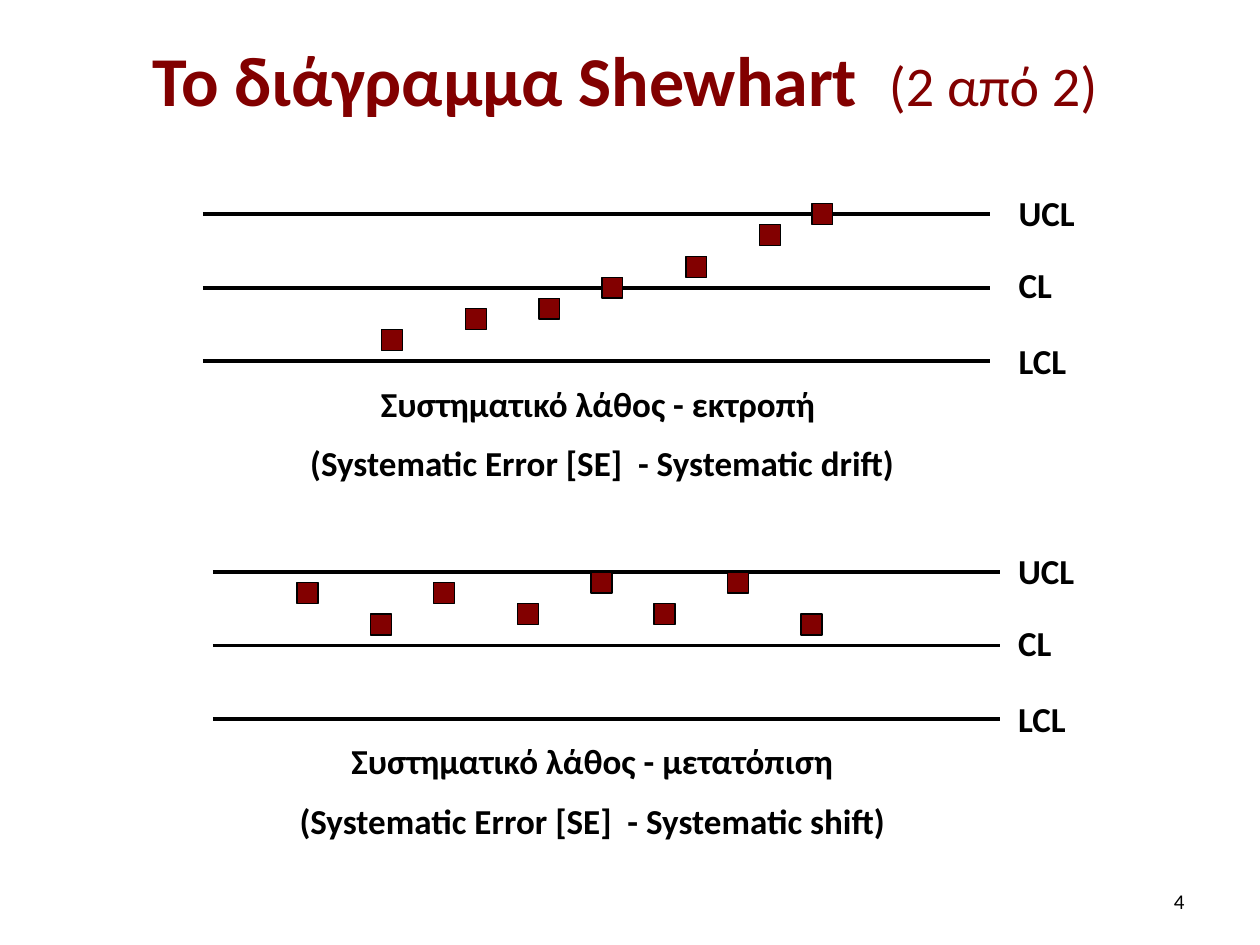
from dataclasses import dataclass

from lxml import etree
from pptx import Presentation
from pptx.dml.color import RGBColor
from pptx.enum.shapes import MSO_CONNECTOR, MSO_SHAPE
from pptx.enum.text import MSO_ANCHOR, PP_ALIGN
from pptx.oxml.ns import qn
from pptx.util import Inches, Pt

STRAIGHT = MSO_CONNECTOR.STRAIGHT
SQUARE = MSO_SHAPE.RECTANGLE
TOP, MIDDLE = MSO_ANCHOR.TOP, MSO_ANCHOR.MIDDLE
LEFT, CENTER, RIGHT = PP_ALIGN.LEFT, PP_ALIGN.CENTER, PP_ALIGN.RIGHT


@dataclass(frozen=True)
class Theme:
    font: str = "Calibri"
    ink: RGBColor = RGBColor(0, 0, 0)
    accent: RGBColor = RGBColor(0x82, 0, 0)
    title: int = 40
    counter: int = 32
    body: int = 20
    page: int = 12
    limit_line: float = 2.25
    marker_line: float = 0.75


THEME = Theme()
SLIDE_W, SLIDE_H = 10, 7.5
STEP = 1 / 12           # grid unit of the control charts, in inches
CHART_COLS = 75
LIMIT_ROWS = 7          # rows between neighbouring control limits
MARKER = 2 * STEP
LIMITS = ("UCL", "CL", "LCL")
LABEL_GAPS = (0, 17, 19.5)
CAPTION_GAPS = (0, 10)

# Points are (column, row), counted from the left end of the upper limit.
CHARTS = (
    dict(
        left=1.61, top=1.7, caption_col=8.75, label_col=76.5,
        points=((18, 12), (26, 10), (33, 9), (39, 7), (47, 5), (54, 2), (59, 0)),
        caption=("Συστηματικό λάθος - εκτροπή ",
                 "(Systematic Error [SE]  - Systematic drift)"),
    ),
    dict(
        left=1.69, top=4.54, caption_col=6.85, label_col=75.5,
        points=((9, 2), (16, 5), (22, 2), (30, 4), (37, 1), (43, 4), (50, 1), (57, 5)),
        caption=("Συστηματικό λάθος - μετατόπιση",
                 "(Systematic Error [SE]  - Systematic shift)"),
    ),
)


def add_text(slide, box, paragraphs, align=LEFT, anchor=TOP, gaps=None):
    """Each paragraph is a list of (text, font format) runs; gaps are points before it."""
    frame = slide.shapes.add_textbox(*map(Inches, box)).text_frame
    frame.word_wrap = True
    frame.vertical_anchor = anchor
    for index, runs in enumerate(paragraphs):
        paragraph = frame.paragraphs[0] if index == 0 else frame.add_paragraph()
        paragraph.alignment = align
        if gaps and gaps[index]:
            paragraph.space_before = Pt(gaps[index])
        for text, formats in runs:
            run = paragraph.add_run()
            run.text = text
            color = formats.get("color", THEME.ink)
            run.font.color.rgb = color
            values = dict(name=THEME.font, size=Pt(formats["size"]),
                          bold=formats.get("bold", False))
            for attribute, value in values.items():
                setattr(run.font, attribute, value)


def add_limit_line(slide, left, y):
    line = slide.shapes.add_connector(
        STRAIGHT, *map(Inches, (left, y, left + CHART_COLS * STEP, y)))
    line.line.color.rgb = THEME.ink
    line.line.width = Pt(THEME.limit_line)
    etree.SubElement(line._element.spPr, qn("a:effectLst"))


def add_marker(slide, center_x, center_y):
    corner = (center_x - MARKER / 2, center_y - MARKER / 2)
    marker = slide.shapes.add_shape(SQUARE, *map(Inches, (*corner, MARKER, MARKER)))
    marker.shadow.inherit = False
    marker.fill.solid()
    marker.fill.fore_color.rgb = THEME.accent
    marker.line.color.rgb = THEME.ink
    marker.line.width = Pt(THEME.marker_line)


def add_control_chart(slide, left, top, points, caption, caption_col, label_col):
    for index in range(len(LIMITS)):
        add_limit_line(slide, left, top + index * LIMIT_ROWS * STEP)
    for col, row in points:
        add_marker(slide, left + col * STEP, top + row * STEP)
    bold = dict(size=THEME.body, bold=True)
    caption_box = (left + caption_col * STEP, top + 15.4 * STEP, 4.88, 0.94)
    add_text(slide, caption_box, [[(line, bold)] for line in caption],
             align=CENTER, gaps=CAPTION_GAPS)
    label_box = (left + label_col * STEP, top - 2.75 * STEP, 0.79, 1.62)
    add_text(slide, label_box, [[(name, bold)] for name in LIMITS], gaps=LABEL_GAPS)


def add_title(slide, box):
    heading = dict(size=THEME.title, bold=True, color=THEME.accent)
    counter = dict(size=THEME.counter, color=THEME.accent)
    add_text(slide, box, [[("Το διάγραμμα Shewhart  ", heading), ("(2 από 2) ", counter)]],
             align=CENTER, anchor=MIDDLE)


def add_page_number(slide, box):
    add_text(slide, box, [[("4", dict(size=THEME.page))]], align=RIGHT, anchor=MIDDLE)


def main():
    deck = Presentation()
    deck.slide_width, deck.slide_height = Inches(SLIDE_W), Inches(SLIDE_H)
    slide = deck.slides.add_slide(deck.slide_layouts[6])
    for chart in CHARTS:
        add_control_chart(slide, **chart)
    add_title(slide, (0.51, 0.13, 9, 0.99))
    add_page_number(slide, (7.17, 6.95, 2.33, 0.4))
    deck.save("out.pptx")


if __name__ == "__main__":
    main()
